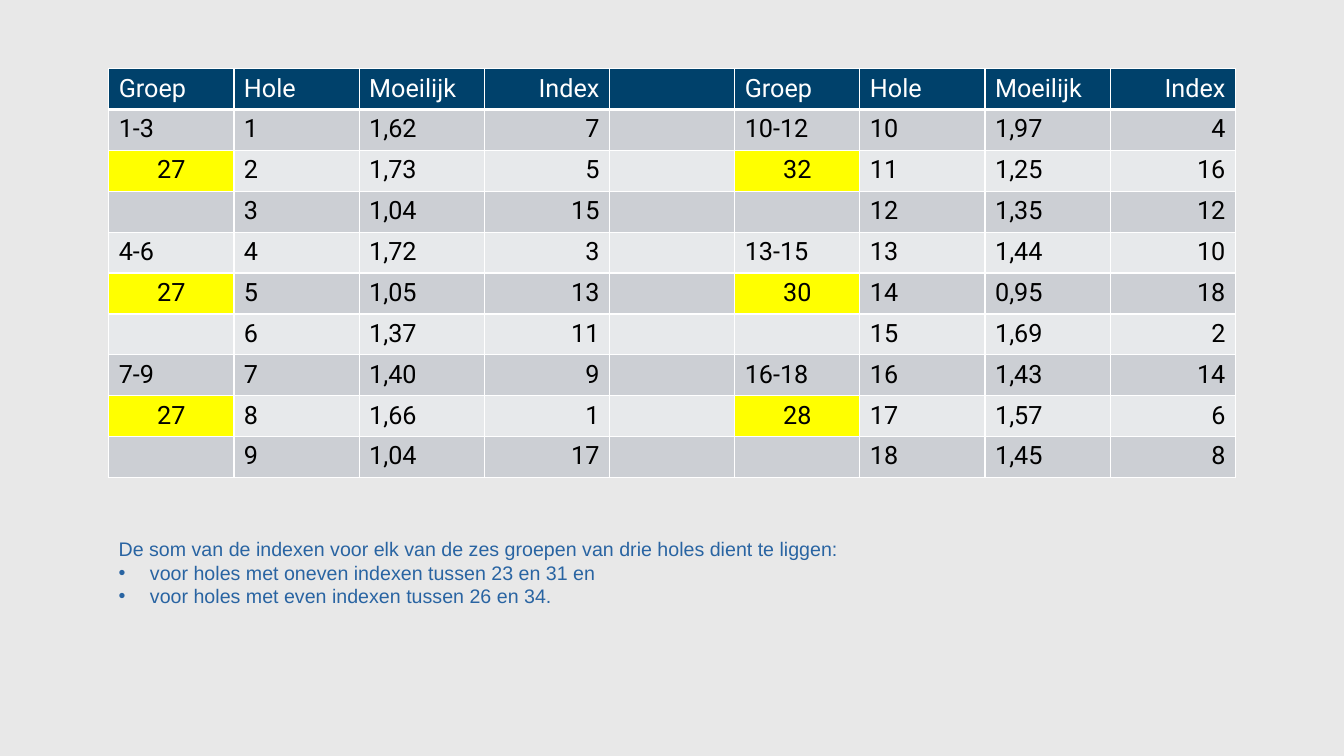
import pptx
import pptx.dml.color
import pptx.enum.text
import pptx.oxml
import pptx.oxml.ns
import pptx.util
from pptx.util import Cm

ALIGN = pptx.enum.text.PP_ALIGN
LEFT, WIDTH = 2.74, 28.4
NAVY, WHITE, BLACK = "00416B", "FFFFFF", "000000"
DARK, LIGHT, YELLOW, BLUE = "CCCFD4", "E7E9EB", "FFFF00", "2964A2"

HEAD = ["Groep", "Hole", "Moeilijk", "Index"]
# Difficulty and index of each hole, for the first and last nine
FRONT = [("1,62", 7), ("1,73", 5), ("1,04", 15), ("1,72", 3), ("1,05", 13),
         ("1,37", 11), ("1,40", 9), ("1,66", 1), ("1,04", 17)]
BACK = [("1,97", 4), ("1,25", 16), ("1,35", 12), ("1,44", 10), ("0,95", 18),
        ("1,69", 2), ("1,43", 14), ("1,57", 6), ("1,45", 8)]
INTRO = "De som van de indexen voor elk van de zes groepen van drie holes dient te liggen:"
RULES = ["voor holes met oneven indexen tussen 23 en 31 en",
         "voor holes met even indexen tussen 26 en 34."]


def paint(fill, color):
    fill.solid()
    fill.fore_color.rgb = pptx.dml.color.RGBColor.from_string(color)


def style(para, size, name, color):
    para.font.size = pptx.util.Pt(size)
    para.font.name = name
    paint(para.font.fill, color)


def edge(cell, side, width):
    cell._tc.get_or_add_tcPr().append(pptx.oxml.parse_xml(
        f'<a:ln{side} {pptx.oxml.ns.nsdecls("a")} w="{pptx.util.Pt(width)}">'
        f'<a:solidFill><a:srgbClr val="{WHITE}"/></a:solidFill></a:ln{side}>'))


def half(holes, first):
    """Rows of one nine: each group of three shows its range, then its sum."""
    rows = []
    for i, (level, index) in enumerate(holes):
        start = i - i % 3
        total = sum(item[1] for item in holes[start:start + 3])
        group = [f"{first + start}-{first + start + 2}", str(total), ""][i % 3]
        rows.append([group, str(first + i), level, str(index)])
    return rows


def fill_cell(cell, text, row, col):
    # Borders, with a thick line under the header
    for side in "LRTB":
        thick = (row, side) in ((0, "B"), (1, "T"))
        edge(cell, side, 3 if thick else 1)

    # Fill: header, group sums, then bands
    total = row % 3 == 2 and col in (0, 5)
    band = DARK if row % 2 else LIGHT
    paint(cell.fill, NAVY if row == 0 else YELLOW if total else band)

    # Text
    para = cell.text_frame.paragraphs[0]
    para.text = text
    style(para, 18, "Roboto", BLACK if row else WHITE)
    if total:
        para.alignment = ALIGN.CENTER
    elif col in (3, 8):
        para.alignment = ALIGN.RIGHT


def add_grid(slide):
    pairs = zip(half(FRONT, 1), half(BACK, 10))
    rows = [HEAD + [""] + HEAD] + [a + [""] + b for a, b in pairs]
    table = slide.shapes.add_table(len(rows), len(rows[0]), Cm(LEFT), Cm(1.73),
                                   Cm(WIDTH), Cm(10.3)).table
    table.first_row = table.horz_banding = False
    for r, texts in enumerate(rows):
        for c, text in enumerate(texts):
            fill_cell(table.cell(r, c), text, r, c)


def add_bullet(para):
    props = para._p.get_or_add_pPr()
    props.set("marL", str(Cm(0.79)))
    props.set("indent", str(-Cm(0.79)))
    props.append(pptx.oxml.parse_xml(
        f'<a:buFont {pptx.oxml.ns.nsdecls("a")} typeface="Arial"/>'))
    props.append(pptx.oxml.parse_xml(
        f'<a:buChar {pptx.oxml.ns.nsdecls("a")} char="•"/>'))


def add_note(slide):
    frame = slide.shapes.add_textbox(Cm(LEFT), Cm(13.41), Cm(WIDTH), Cm(2.06)).text_frame
    frame.word_wrap = True
    frame.auto_size = pptx.enum.text.MSO_AUTO_SIZE.SHAPE_TO_FIT_TEXT
    frame.text = "\n".join([INTRO] + RULES)
    for para in frame.paragraphs:
        style(para, 14, "Arial", BLUE)
    for para in frame.paragraphs[1:]:
        add_bullet(para)


def main():
    deck = pptx.Presentation()
    deck.slide_width, deck.slide_height = Cm(33.87), Cm(19.05)
    slide = deck.slides.add_slide(deck.slide_layouts[6])
    paint(slide.background.fill, "E8E8E8")
    add_grid(slide)
    add_note(slide)
    deck.save("out.pptx")


if __name__ == "__main__":
    main()
